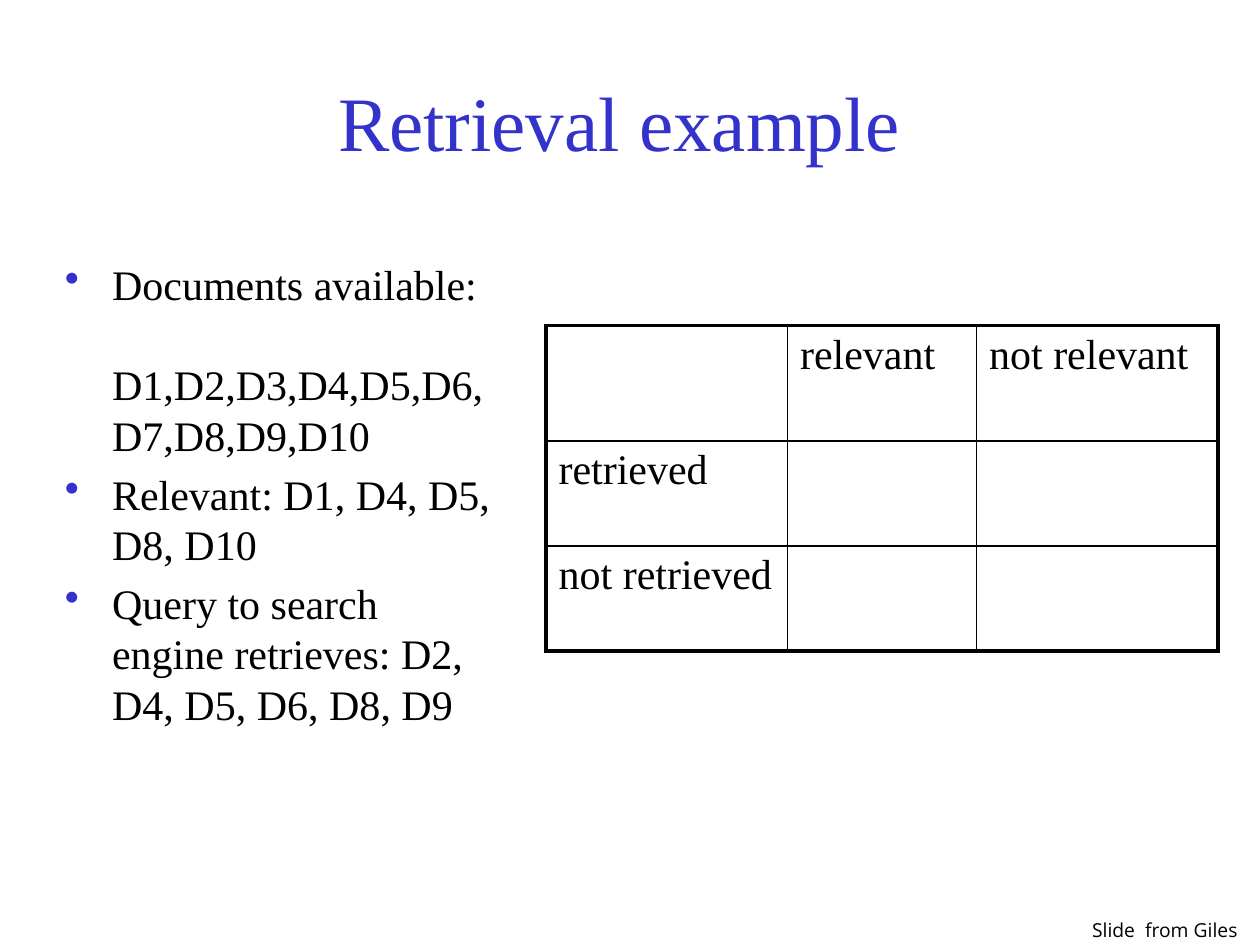
"""Build the retrieval example slide."""
from dataclasses import dataclass

from lxml import etree
from pptx import Presentation
from pptx import util as u
from pptx.dml.color import RGBColor
from pptx.enum import text
from pptx.oxml.ns import qn


@dataclass(frozen=True)
class Theme:
    """Hold the colours, fonts and type sizes."""
    accent: str = "3333CC"
    ink: str = "000000"
    serif: str = "Times New Roman"
    sans: str = "Open Sans"
    title: float = 44
    body: float = 24
    credit: float = 11
    line: float = 28.8
    gap: float = 4.8
    thick: float = 2.25
    thin: float = 1


@dataclass(frozen=True)
class Area:
    """Hold a rectangle in points."""
    left: float
    top: float
    width: float
    height: float

    def lengths(self) -> tuple:
        """Return the rectangle as slide lengths."""
        return tuple(u.Pt(v) for v in (self.left, self.top, self.width, self.height))


@dataclass(frozen=True)
class Item:
    """Hold one paragraph of the list."""
    words: str
    bullet: bool = True
    before: float = Theme.gap


THEME = Theme()
ITEMS = (
    Item("Documents available:"),
    Item("D1,D2,D3,D4,D5,D6,D7,D8,D9,D10", bullet=False, before=THEME.line),
    Item("Relevant: D1, D4, D5, D8, D10"),
    Item("Query to search engine retrieves: D2, D4, D5, D6, D8, D9"),
)
ROWS = (
    ("", "relevant", "not relevant"),
    ("retrieved", "", ""),
    ("not retrieved", "", ""),
)
COLUMN_WIDTHS = (138, 108, 138)
ROW_HEIGHTS = (66, 60, 60)
INDENT = 27


def style(para, font: str, size: float, color: str) -> None:
    """Set the font of a paragraph."""
    para.font.name = font
    para.font.size = u.Pt(size)
    para.font.color.rgb = RGBColor.from_string(color)


def add_box(page, area: Area, wrap: bool = True):
    """Add a text box and return its text frame."""
    frame = page.shapes.add_textbox(*area.lengths()).text_frame
    frame.word_wrap = wrap
    return frame


def add_bullet(para, color: str) -> None:
    """Give a paragraph a hanging coloured bullet."""
    props = para._p.get_or_add_pPr()
    props.set("indent", str(u.Pt(-INDENT)))
    tint = etree.SubElement(props, qn("a:buClr"))
    etree.SubElement(tint, qn("a:srgbClr"), val=color)
    etree.SubElement(props, qn("a:buChar"), char="•")


def add_list(page, area: Area, items: tuple[Item, ...]) -> None:
    """Add the list of documents and results."""
    frame = add_box(page, area)
    for index, item in enumerate(items):
        para = frame.add_paragraph() if index else frame.paragraphs[0]
        para.text = item.words
        para.line_spacing = u.Pt(THEME.line)
        para.space_before = u.Pt(item.before)
        para._p.get_or_add_pPr().set("marL", str(u.Pt(INDENT)))
        if item.bullet:
            add_bullet(para, THEME.accent)
        style(para, THEME.serif, THEME.body, THEME.ink)


def set_borders(cell, outer: dict[str, bool]) -> None:
    """Draw thick outer and thin inner cell edges."""
    props = cell._tc.get_or_add_tcPr()
    for edge, is_outer in outer.items():
        width = THEME.thick if is_outer else THEME.thin
        line = etree.SubElement(props, qn(f"a:{edge}"), w=str(u.Pt(width)))
        fill = etree.SubElement(line, qn("a:solidFill"))
        etree.SubElement(fill, qn("a:srgbClr"), val=THEME.ink)


def add_grid(page, area: Area, rows: tuple[tuple[str, ...], ...]) -> None:
    """Add the relevance table."""
    last_row, last_column = len(rows) - 1, len(rows[0]) - 1
    table = page.shapes.add_table(len(rows), len(rows[0]), *area.lengths()).table
    table.first_row = table.horz_banding = False
    for column, width in zip(table.columns, COLUMN_WIDTHS):
        column.width = u.Pt(width)
    for row, height in zip(table.rows, ROW_HEIGHTS):
        row.height = u.Pt(height)
    for r, labels in enumerate(rows):
        for c, label in enumerate(labels):
            cell = table.cell(r, c)
            set_borders(cell, {"lnL": c == 0, "lnR": c == last_column,
                               "lnT": r == 0, "lnB": r == last_row})
            cell.fill.background()
            para = cell.text_frame.paragraphs[0]
            para.text = label
            para.space_before = u.Pt(THEME.gap)
            style(para, THEME.serif, THEME.body, THEME.ink)


def main() -> None:
    """Build and save the deck."""
    deck = Presentation()
    deck.slide_width, deck.slide_height = u.Pt(720), u.Pt(540)
    page = deck.slides.add_slide(deck.slide_layouts[6])

    title = add_box(page, Area(48, 24, 612, 90))
    title.vertical_anchor = text.MSO_ANCHOR.MIDDLE
    para = title.paragraphs[0]
    para.text = "Retrieval example"
    para.alignment = text.PP_ALIGN.CENTER
    style(para, THEME.serif, THEME.title, THEME.accent)

    add_list(page, Area(30, 144, 258, 324), ITEMS)
    add_grid(page, Area(312, 186, sum(COLUMN_WIDTHS), sum(ROW_HEIGHTS)), ROWS)

    credit = add_box(page, Area(617, 521, 102, 21), wrap=False)
    credit.paragraphs[0].text = "Slide  from Giles"
    style(credit.paragraphs[0], THEME.sans, THEME.credit, THEME.ink)

    deck.save("out.pptx")


if __name__ == "__main__":
    main()
